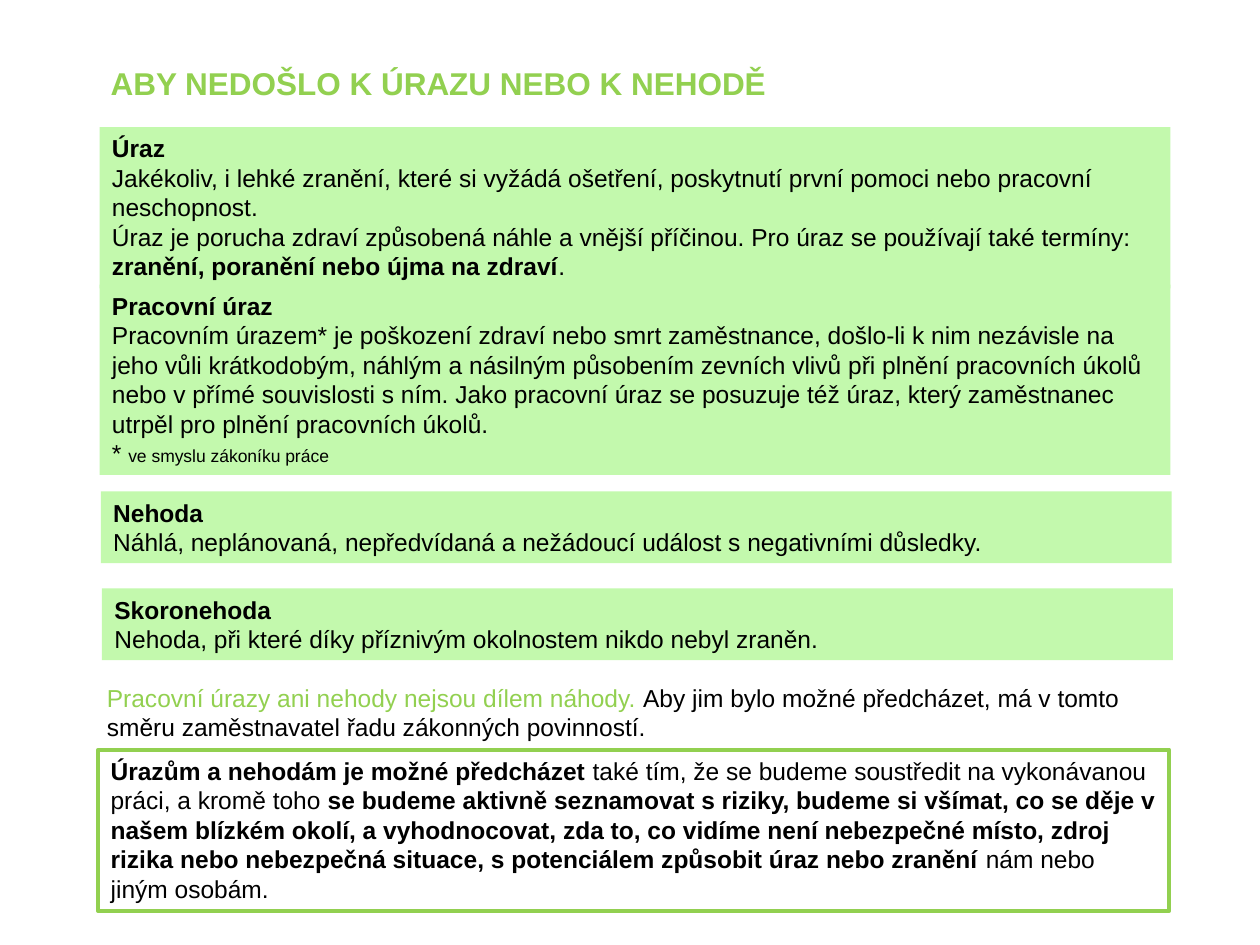
from dataclasses import dataclass
from typing import Optional

from pptx import Presentation
from pptx import util as u
from pptx.dml.color import RGBColor
from pptx.enum import shapes, text


@dataclass(frozen=True)
class Theme:
    font: str = "Arial"
    ink: str = "000000"
    accent: str = "92D050"
    panel: str = "C3F9AD"
    title: int = 18
    body: int = 14
    note: int = 10
    border: float = 2.25


T = Theme()


@dataclass(frozen=True)
class Run:
    text: str
    bold: bool = False
    size: int = T.body
    color: str = T.ink


@dataclass(frozen=True)
class Block:
    left: float
    top: float
    height: float
    paragraphs: list[list[Run]]
    fill: Optional[str] = None
    line: Optional[str] = None


WIDTH = 8.5


def definition(left: float, top: float, height: float, term: str,
               *paragraphs: list[Run]) -> Block:
    return Block(left, top, height, [[Run(term, bold=True)], *paragraphs], fill=T.panel)


BLOCKS = [
    definition(0.8, 3.9, 0.57, "Nehoda", [
        Run("Náhlá, neplánovaná, nepředvídaná a nežádoucí událost s negativními důsledky.")]),
    definition(0.79, 1.01, 1.28, "Úraz", [
        Run("Jakékoliv, i lehké zranění, které si vyžádá ošetření, poskytnutí první pomoci "
            "nebo pracovní neschopnost.")], [
        Run("Úraz je porucha zdraví způsobená náhle a vnější příčinou. "
            "Pro úraz se používají také termíny: "),
        Run("zranění, poranění nebo újma na zdraví", bold=True),
        Run(".")]),
    definition(0.79, 2.26, 1.51, "Pracovní úraz", [
        Run("Pracovním úrazem* je poškození zdraví nebo smrt zaměstnance, došlo-li k nim "
            "nezávisle na jeho vůli krátkodobým, náhlým a násilným působením zevních vlivů "
            "při plnění pracovních úkolů nebo v přímé souvislosti s ním. Jako pracovní úraz "
            "se posuzuje též úraz, který zaměstnanec utrpěl pro plnění pracovních úkolů.")], [
        Run("* "),
        Run("ve smyslu zákoníku práce", size=T.note)]),
    definition(0.81, 4.67, 0.57, "Skoronehoda", [
        Run("Nehoda, při které díky příznivým okolnostem nikdo nebyl zraněn.")]),
    Block(0.75, 5.37, 0.57, [[
        Run("Pracovní úrazy ani nehody nejsou dílem náhody. ", color=T.accent),
        Run("Aby jim bylo možné předcházet, má v tomto směru zaměstnavatel řadu "
            "zákonných povinností.")]]),
    Block(0.78, 0.46, 0.4, [[
        Run("ABY NEDOŠLO K ÚRAZU NEBO K NEHODĚ", True, T.title, T.accent)]]),
    Block(0.78, 5.95, 1.28, [[
        Run("Úrazům a nehodám je možné předcházet ", bold=True),
        Run("také tím, že se budeme soustředit na vykonávanou práci, a kromě toho "),
        Run("se budeme aktivně seznamovat s riziky, budeme si všímat, co se děje v našem "
            "blízkém okolí, a vyhodnocovat, zda to, co vidíme není nebezpečné místo, zdroj "
            "rizika nebo nebezpečná situace, s potenciálem způsobit úraz nebo zranění ",
            bold=True),
        Run("nám nebo jiným osobám.")]], line=T.accent),
]


def add_frame(s, block: Block):
    box = [u.Inches(v) for v in (block.left, block.top, WIDTH, block.height)]
    if not (block.fill or block.line):
        return s.shapes.add_textbox(*box)
    sp = s.shapes.add_shape(shapes.MSO_SHAPE.RECTANGLE, *box)
    sp.shadow.inherit = False
    if block.fill:
        sp.fill.solid()
        sp.fill.fore_color.rgb = RGBColor.from_string(block.fill)
    else:
        sp.fill.background()
    if block.line:
        sp.line.color.rgb = RGBColor.from_string(block.line)
        sp.line.width = u.Pt(T.border)
    else:
        sp.line.fill.background()
    return sp


def add_run(p, run: Run) -> None:
    r = p.add_run()
    r.text = run.text
    for name, value in {"name": T.font, "size": u.Pt(run.size), "bold": run.bold}.items():
        setattr(r.font, name, value)
    r.font.color.rgb = RGBColor.from_string(run.color)


def draw_block(s, block: Block) -> None:
    tf = add_frame(s, block).text_frame
    frame_format = {
        "word_wrap": True,
        "auto_size": text.MSO_AUTO_SIZE.SHAPE_TO_FIT_TEXT,
        "vertical_anchor": text.MSO_ANCHOR.TOP,
    }
    for name, value in frame_format.items():
        setattr(tf, name, value)
    for i, runs in enumerate(block.paragraphs):
        p = tf.add_paragraph() if i else tf.paragraphs[0]
        p.alignment = text.PP_ALIGN.LEFT
        for run in runs:
            add_run(p, run)


def main() -> None:
    prs = Presentation()
    prs.slide_width, prs.slide_height = u.Inches(10), u.Inches(7.5)
    s = prs.slides.add_slide(prs.slide_layouts[6])
    for block in BLOCKS:
        draw_block(s, block)
    prs.save("out.pptx")


if __name__ == "__main__":
    main()
